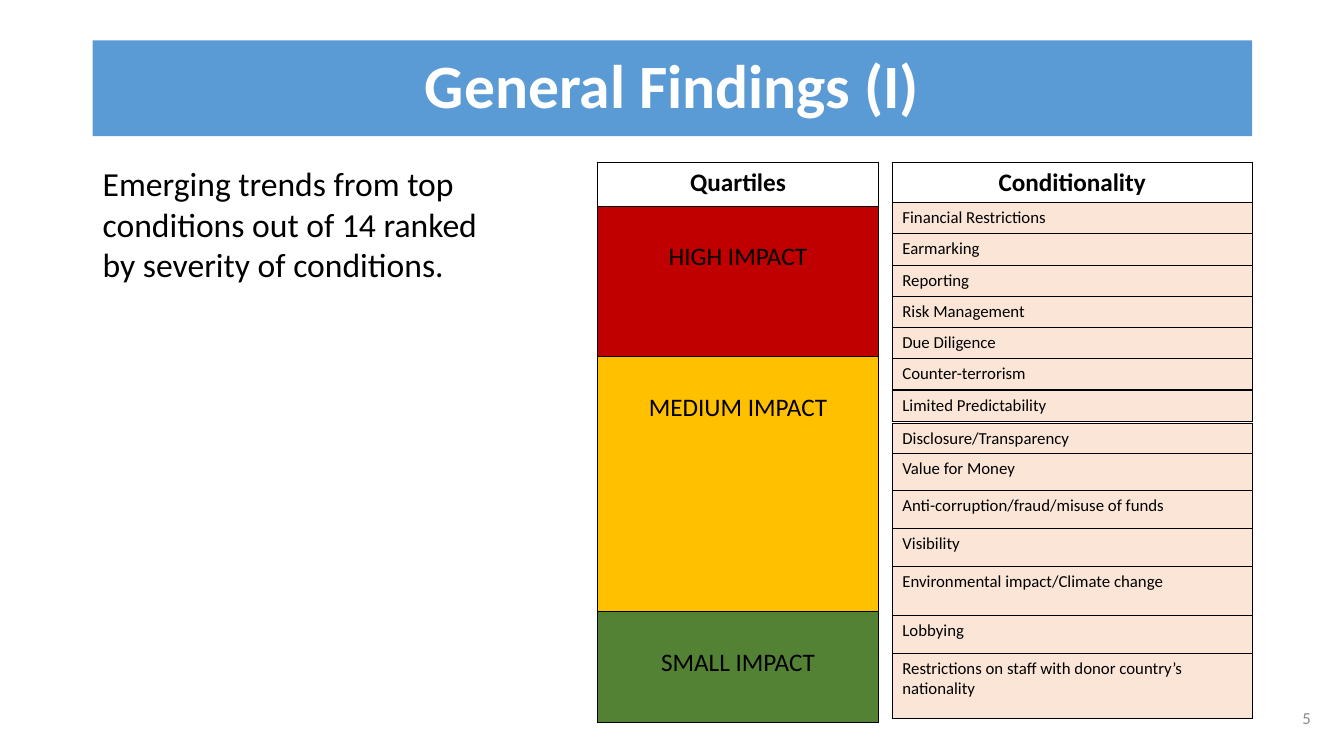
from pptx import Presentation
from pptx.dml.color import RGBColor
from pptx.enum.shapes import MSO_SHAPE
from pptx.enum.text import MSO_ANCHOR, PP_ALIGN
from pptx.oxml import parse_xml
from pptx.oxml.ns import nsdecls
from pptx.util import Inches, Pt

PEACH = "FBE5D6"
TOP = ["Financial Restrictions", "Earmarking", "Reporting", "Risk Management",
       "Due Diligence", "Counter-terrorism", "Limited Predictability"]
REST = [("Disclosure/Transparency", 0.3), ("Value for Money", 0.37),
        ("Anti-corruption/fraud/misuse of funds", 0.37), ("Visibility", 0.38),
        ("Environmental impact/Climate change", 0.49), ("Lobbying", 0.37),
        ("Restrictions on staff with donor country’s nationality", 0.65)]
IMPACT = [("HIGH IMPACT", 1.49, "C00000"), ("MEDIUM IMPACT", 2.53, "FFC000"),
          ("SMALL IMPACT", 1.1, "548235")]


def color(code):
    """Turn a hex string into a colour."""
    return RGBColor.from_string(code)


def write(frame, text, size, code="000000", bold=False, align=PP_ALIGN.LEFT):
    """Put one styled run into the first paragraph of a frame."""
    frame.word_wrap = True
    par = frame.paragraphs[0]
    par.alignment = align
    run = par.add_run()
    run.text = text
    font = run.font
    font.name, font.size, font.bold = "Calibri", Pt(size), bold
    font.color.rgb = color(code)
    return par


def border(cell):
    """Draw a thin black line on all four sides of a cell."""
    props = cell._tc.get_or_add_tcPr()
    for side in ("lnL", "lnR", "lnT", "lnB"):
        props.append(parse_xml(
            f'<a:{side} {nsdecls("a")} w="{Pt(1)}"><a:solidFill>'
            f'<a:srgbClr val="000000"/></a:solidFill></a:{side}>'))


def column(slide, left, top, width, rows):
    """Build a one-column table from (text, height, fill, style, inset) rows."""
    total = sum(row[1] for row in rows)
    table = slide.shapes.add_table(len(rows), 1, Inches(left), Inches(top),
                                   Inches(width), Inches(total)).table
    table.first_row = table.horz_banding = False
    for i, (text, height, fill, style, inset) in enumerate(rows):
        table.rows[i].height = Inches(height)
        cell = table.cell(i, 0)
        border(cell)
        cell.fill.solid()
        cell.fill.fore_color.rgb = color(fill)
        cell.margin_top = Inches(inset)
        write(cell.text_frame, text, **style)


def banner(slide, left, top, width, height):
    """Draw the blue title bar."""
    bar = slide.shapes.add_shape(MSO_SHAPE.RECTANGLE, Inches(left), Inches(top),
                                 Inches(width), Inches(height))
    bar.shadow.inherit = False
    bar.fill.solid()
    bar.fill.fore_color.rgb = color("5B9BD5")
    bar.line.fill.background()
    bar.text_frame.vertical_anchor = MSO_ANCHOR.MIDDLE
    par = write(bar.text_frame, "General Findings (I)", 44, "FFFFFF", True,
                PP_ALIGN.CENTER)
    par.line_spacing = 0.9


def note(slide, left, top, width, height, text, size, **style):
    """Place a text box and return its frame."""
    box = slide.shapes.add_textbox(Inches(left), Inches(top), Inches(width),
                                   Inches(height))
    write(box.text_frame, text, size, **style)
    return box.text_frame


def impacts(slide, left, top, width):
    """Place the coloured quartile column."""
    head = dict(size=18, bold=True, align=PP_ALIGN.CENTER)
    label = dict(size=18, align=PP_ALIGN.CENTER)
    rows = [("Quartiles", 0.44, "FFFFFF", head, 0.05)]
    rows += [(text, high, fill, label, 0.35) for text, high, fill in IMPACT]
    column(slide, left, top, width, rows)


def terms(slide, left, top, width):
    """Place the two stacked lists of conditions."""
    head = dict(size=18, bold=True, align=PP_ALIGN.CENTER)
    item = dict(size=12)
    rows = [("Conditionality", 0.4, "FFFFFF", head, 0.05)]
    rows += [(text, 0.31, PEACH, item, 0.05) for text in TOP]
    column(slide, left, top, width, rows)
    rows = [(text, high, PEACH, item, 0.05) for text, high in REST]
    column(slide, left, top + 2.59, width, rows)


def main():
    """Build and save the slide."""
    deck = Presentation()
    deck.slide_width, deck.slide_height = Inches(13.33), Inches(7.5)
    slide = deck.slides.add_slide(deck.slide_layouts[6])
    banner(slide, 0.92, 0.4, 11.5, 0.95)
    note(slide, 0.92, 1.57, 4.28, 1.31, "Emerging trends from top conditions "
         "out of 14 ranked by severity of conditions.", 24)
    impacts(slide, 5.93, 1.61, 2.78)
    terms(slide, 8.85, 1.61, 3.57)
    page = note(slide, 10.1, 6.93, 3, 0.38, "5", 12, code="8C8C8C",
                align=PP_ALIGN.RIGHT)
    page.vertical_anchor = MSO_ANCHOR.MIDDLE
    deck.save("out.pptx")


if __name__ == "__main__":
    main()
